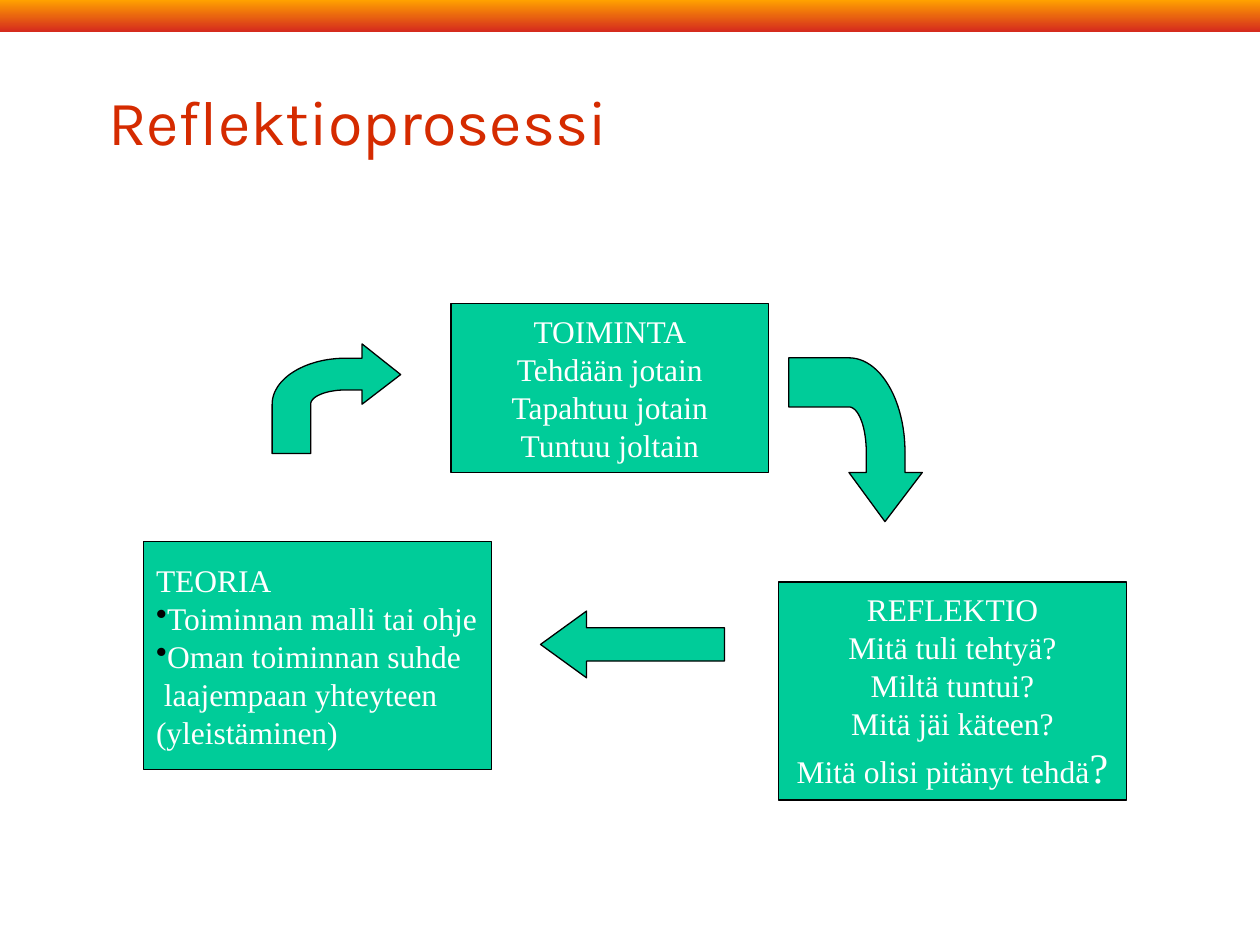
"""Build the slide on the reflection process."""
from math import cos, pi, sin

from lxml import etree
from pptx import Presentation
from pptx.dml.color import RGBColor
from pptx.enum.shapes import MSO_SHAPE
from pptx.enum.text import MSO_ANCHOR, PP_ALIGN
from pptx.oxml.ns import qn
from pptx.util import Inches, Pt

RECT, LEFT_ARROW = MSO_SHAPE.RECTANGLE, MSO_SHAPE.LEFT_ARROW
MIDDLE = MSO_ANCHOR.MIDDLE
LEFT, CENTER = PP_ALIGN.LEFT, PP_ALIGN.CENTER
COLORS = {"green": "00CC99", "black": "000000", "white": "FFFFFF",
          "title": "D52B00", "amber": "FFA100", "red": "D52B1E"}
BOXES = [
    ((3.58, 2.41, 2.52, 1.34), CENTER,
     ["TOIMINTA", "Tehdään jotain", "Tapahtuu jotain", "Tuntuu joltain"]),
    ((6.18, 4.62, 2.76, 1.73), CENTER,
     ["REFLEKTIO", "Mitä tuli tehtyä?", "Miltä tuntui?",
      "Mitä jäi käteen?", "Mitä olisi pitänyt tehdä"]),
    ((1.14, 4.3, 2.76, 1.81), LEFT,
     ["TEORIA", "Toiminnan malli tai ohje",
      "Oman toiminnan suhde\v laajempaan yhteyteen\v(yleistäminen)"]),
]


def color(name):
    """Return a named colour."""
    return RGBColor.from_string(COLORS[name])


def style(font, face, size, name):
    """Set the face, size and colour of a font."""
    font.name, font.size = face, Pt(size)
    font.color.rgb = color(name)


def paint(shape):
    """Give a shape the green fill and thin black line."""
    shape.shadow.inherit = False
    shape.fill.solid()
    shape.fill.fore_color.rgb = color("green")
    shape.line.color.rgb = color("black")
    shape.line.width = Pt(0.75)


def add_band(slide):
    """Add the gradient band along the top."""
    band = slide.shapes.add_shape(RECT, 0, 0, Inches(10), Inches(0.25))
    band.shadow.inherit = False
    band.line.fill.background()
    band.fill.gradient()
    band.fill.gradient_angle = 270
    for stop, name, place in zip(band.fill.gradient_stops, ("amber", "red"), (0, 1)):
        stop.color.rgb = color(name)
        stop.position = place


def add_title(slide, text):
    """Add the slide title."""
    box = slide.shapes.add_textbox(*map(Inches, (0.76, 0.33, 8.5, 1.25)))
    frame = box.text_frame
    frame.word_wrap = True
    frame.vertical_anchor = MIDDLE
    frame.text = text
    style(frame.paragraphs[0].runs[0].font, "Karla", 36, "title")


def add_bullet(para):
    """Put a black bullet before a paragraph."""
    props = para._p.get_or_add_pPr()
    tint = etree.SubElement(props, qn("a:buClr"))
    etree.SubElement(tint, qn("a:srgbClr"), val=COLORS["black"])
    etree.SubElement(props, qn("a:buChar"), char="•")


def add_box(slide, place, align, lines):
    """Add a green box of text lines and return its text frame."""
    box = slide.shapes.add_shape(RECT, *map(Inches, place))
    paint(box)
    frame = box.text_frame
    frame.word_wrap = False
    frame.vertical_anchor = MIDDLE
    frame.text = "\n".join(lines)
    for para in frame.paragraphs:
        para.alignment = align
        for run in para.runs:
            style(run.font, "Times New Roman", 18, "white")
    return frame


def arc(wide, high, steps=24):
    """Return a quarter ellipse about the centre of the bend."""
    turns = [pi / 2 * i / steps for i in range(steps + 1)]
    return [(0.575 - wide * sin(t), 0.55 - high * cos(t)) for t in turns]


def add_bend(slide, left, top, width, height, turn=0):
    """Add an arrow that bends from upward to rightward, then turn it."""
    outline = [(1, 0.28), (0.7, 0), (0.7, 0.13), *arc(0.575, 0.42),
               (0, 1), (0.3, 1), *reversed(arc(0.275, 0.13)),
               (0.7, 0.42), (0.7, 0.55)]
    dots = [(Inches(left + x * width), Inches(top + y * height))
            for x, y in outline]
    pen = slide.shapes.build_freeform(*dots[0])
    pen.add_line_segments(dots[1:], close=True)
    arrow = pen.convert_to_shape()
    arrow.rotation = turn
    paint(arrow)


def add_arrow(slide, place):
    """Add the straight arrow that points left."""
    arrow = slide.shapes.add_shape(LEFT_ARROW, *map(Inches, place))
    arrow.adjustments[0] = 0.5
    arrow.adjustments[1] = 0.69
    paint(arrow)


def main():
    """Build and save the slide."""
    deck = Presentation()
    deck.slide_width, deck.slide_height = Inches(10), Inches(7.5)
    slide = deck.slides.add_slide(deck.slide_layouts[6])
    add_band(slide)
    add_title(slide, "Reflektioprosessi")
    _, review, theory = [add_box(slide, *box) for box in BOXES]
    mark = review.paragraphs[-1].add_run()
    mark.text = "?"
    style(mark.font, "Times New Roman", 24, "white")
    for para in theory.paragraphs[1:]:
        add_bullet(para)
    add_bend(slide, 6.14, 2.96, 1.3, 1.06, 90)
    add_arrow(slide, (4.29, 4.85, 1.46, 0.53))
    add_bend(slide, 2.16, 2.73, 1.02, 0.87)
    deck.save("out.pptx")


if __name__ == "__main__":
    main()
